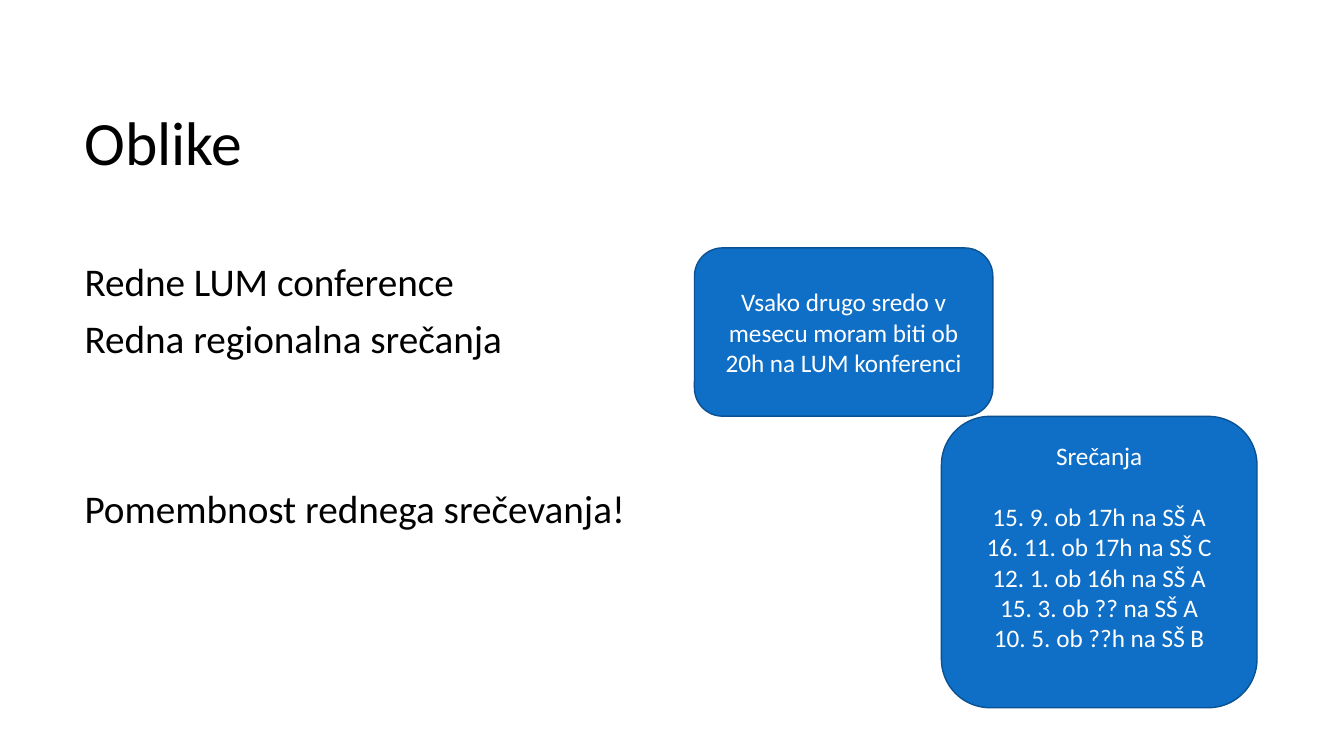
from pptx import Presentation
from pptx.dml.color import RGBColor
from pptx.enum.shapes import MSO_SHAPE
from pptx.enum.text import MSO_ANCHOR, PP_ALIGN
from pptx.util import Pt

ROUNDED = MSO_SHAPE.ROUNDED_RECTANGLE
TOP, MIDDLE = MSO_ANCHOR.TOP, MSO_ANCHOR.MIDDLE
LEFT, CENTER = PP_ALIGN.LEFT, PP_ALIGN.CENTER

FONT = "Calibri"
COLORS = {"text": "000000", "card": "0F6FC6", "edge": "0B5292", "card_text": "FFFFFF"}
INSET = 3.6
CARD_LINE = 22  # height of one line of card text

# Each line of text comes with the space before it.
TITLE = [("Oblike", 0)]
FORMS = [
    ("Redne LUM conference", 0),
    ("Redna regionalna srečanja", 10),
    ("Pomembnost rednega srečevanja!", 91.5),
]
REMINDER = [("Vsako drugo sredo v mesecu moram biti ob 20h na LUM konferenci", 0)]
MEETINGS = [
    ("Srečanja", 0),
    ("15. 9. ob 17h na SŠ A", CARD_LINE),
    ("16. 11. ob 17h na SŠ C", 0),
    ("12. 1. ob 16h na SŠ A", 0),
    ("15. 3. ob ?? na SŠ A", 0),
    ("10. 5. ob ??h na SŠ B", 0),
]

# Left, top, width, height; bottom inset
TEXTS = [
    (TITLE, (53.3, 61.2, 756.7, 85), 44, MIDDLE),
    (FORMS, (53.3, 184.3, 884.9, 283.7), 28, TOP),
]
CARDS = [
    (REMINDER, (496.1, 177.1, 213.1, 120.2), INSET),
    (MEETINGS, (672.5, 297.4, 225.4, 208.1), INSET + CARD_LINE),
]


def color(name):
    return RGBColor.from_string(COLORS[name])


def write(frame, lines, size, color_name, align, anchor, line_spacing):
    frame.word_wrap = True
    frame.vertical_anchor = anchor
    frame.text = "\n".join(text for text, _ in lines)
    for paragraph, (_, space_before) in zip(frame.paragraphs, lines):
        paragraph.alignment = align
        paragraph.line_spacing = line_spacing
        paragraph.space_before = Pt(space_before)
        paragraph.font.name = FONT
        paragraph.font.size = Pt(size)
        paragraph.font.color.rgb = color(color_name)


def add_text(slide, lines, box, size, anchor):
    frame = slide.shapes.add_textbox(*map(Pt, box)).text_frame
    write(frame, lines, size, "text", LEFT, anchor, 0.9)


def add_card(slide, lines, box, bottom_inset):
    card = slide.shapes.add_shape(ROUNDED, *map(Pt, box))
    card.shadow.inherit = False
    card.fill.solid()
    card.fill.fore_color.rgb = color("card")
    card.line.color.rgb = color("edge")
    card.line.width = Pt(1)
    card.text_frame.margin_bottom = Pt(bottom_inset)
    write(card.text_frame, lines, 18, "card_text", CENTER, MIDDLE, 1.0)


def main():
    deck = Presentation()
    deck.slide_width, deck.slide_height = Pt(960), Pt(540)
    slide = deck.slides.add_slide(deck.slide_layouts[6])
    for text in TEXTS:
        add_text(slide, *text)
    for card in CARDS:
        add_card(slide, *card)
    deck.save("out.pptx")


if __name__ == "__main__":
    main()
